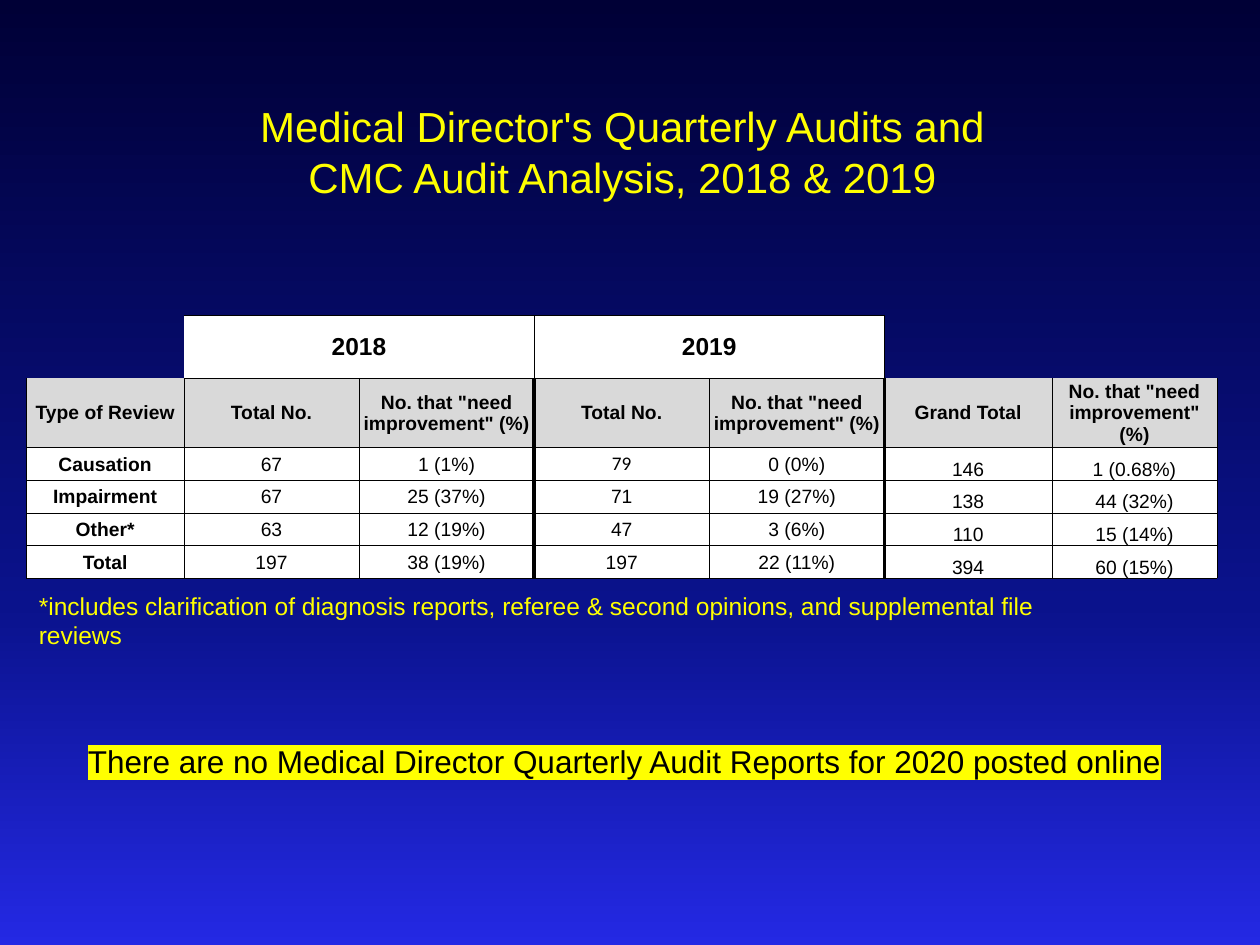
from copy import deepcopy
from dataclasses import dataclass

from lxml import etree
from pptx import Presentation
from pptx.dml.color import RGBColor
from pptx.enum.text import MSO_ANCHOR, MSO_AUTO_SIZE, PP_ALIGN
from pptx.oxml.ns import qn
from pptx.util import Inches, Pt

LEFT, CENTER = PP_ALIGN.LEFT, PP_ALIGN.CENTER
MIDDLE, BOTTOM = MSO_ANCHOR.MIDDLE, MSO_ANCHOR.BOTTOM
GROW = MSO_AUTO_SIZE.SHAPE_TO_FIT_TEXT
PLAIN = "{2D5ABB26-0587-4C30-8999-92F81FD0307C}"
THIN, THICK = 0.25, 2.25

COLORS = {
    "top": "000036", "middle": "0A128C", "bottom": "2429E4",
    "black": "000000", "white": "FFFFFF", "gray": "D9D9D9", "yellow": "FFFF00",
}
STOPS = [("top", 0), ("middle", 0.64), ("bottom", 1)]

WIDTHS = [1.25, 1.39, 1.39, 1.39, 1.39, 1.33, 1.31]
HEIGHTS = [0.5, 0.55] + [0.26] * 4
NEED = 'No. that "need improvement" (%)'
ROWS = [
    ["", "2018", "", "2019", "", "", ""],
    ["Type of Review", "Total No.", NEED, "Total No.", NEED, "Grand Total", NEED],
    ["Causation", "67", "1 (1%)", "79", "0 (0%)", "146", "1 (0.68%)"],
    ["Impairment", "67", "25 (37%)", "71", "19 (27%)", "138", "44 (32%)"],
    ["Other*", "63", "12 (19%)", "47", "3 (6%)", "110", "15 (14%)"],
    ["Total", "197", "38 (19%)", "197", "22 (11%)", "394", "60 (15%)"],
]


@dataclass
class Note:
    text: str
    left: float
    top: float
    width: float
    height: float
    size: int
    color: str = "yellow"
    align: PP_ALIGN = LEFT
    mark: str = ""


NOTES = [
    Note("*includes clarification of diagnosis reports, referee & second opinions, "
         "and supplemental file reviews", 0.21, 4.64, 8.22, 0.34, 14),
    Note("Medical Director's Quarterly Audits and CMC Audit Analysis, 2018 & 2019",
         1.69, 0.75, 6.5, 0.91, 24, align=CENTER),
    Note("There are no Medical Director Quarterly Audit Reports for 2020 posted online",
         0.6, 5.84, 9.06, 0.4, 18, color="black", mark="yellow"),
]


def rgb(name: str) -> RGBColor:
    return RGBColor.from_string(COLORS[name])


def add_fill(node, tag: str, color: str):
    fill = etree.SubElement(node, qn(tag))
    etree.SubElement(fill, qn("a:srgbClr"), val=COLORS[color])


def write(frame, text: str, *, size: int, color: str = "black", bold: bool = False,
          align: PP_ALIGN = CENTER, font: str = "Arial", mark: str = ""):
    para = frame.paragraphs[0]
    para.alignment = align
    run = para.add_run()
    run.text = text
    run.font.size = Pt(size)
    run.font.bold = bold
    run.font.color.rgb = rgb(color)
    if mark:
        add_fill(run.font._element, "a:highlight", mark)
    run.font.name = font


def add_note(slide, note: Note):
    box = slide.shapes.add_textbox(Inches(note.left), Inches(note.top),
                                   Inches(note.width), Inches(note.height))
    frame = box.text_frame
    frame.word_wrap = True
    frame.auto_size = GROW
    write(frame, note.text, size=note.size, color=note.color,
          align=note.align, mark=note.mark)


def edges(row: int, col: int) -> dict[str, float]:
    if row == 0:
        lines = {"T": THIN, "B": THIN}
        lines["R" if col < 3 else "L"] = THIN
        return lines
    lines = {
        "L": THICK if col in (3, 5) else THIN,
        "R": THICK if col in (2, 4) else THIN,
    }
    if row > 1 or 1 <= col <= 4:
        lines["T"] = THIN
    lines["B"] = THIN
    return lines


def add_edges(cell, lines: dict[str, float]):
    props = cell._tc.get_or_add_tcPr()
    for side in "LRTB":
        if side in lines:
            line = etree.SubElement(props, qn(f"a:ln{side}"), w=str(Pt(lines[side])))
            add_fill(line, "a:solidFill", "black")


def fill_cell(cell, row: int, col: int, text: str):
    cell.margin_left = cell.margin_right = cell.margin_top = Inches(0.01)
    cell.margin_bottom = 0
    cell.vertical_anchor = BOTTOM if row > 1 and col > 4 else MIDDLE
    if row == 0 and not 1 <= col <= 4:
        cell.fill.background()
        return
    add_edges(cell, edges(row, col))
    cell.fill.solid()
    cell.fill.fore_color.rgb = rgb("gray" if row == 1 else "white")
    if text:
        write(cell.text_frame, text, size=14 if row == 0 else 11,
              bold=row < 2 or col == 0, font="Calibri" if text == "79" else "Arial")


def add_grid(slide):
    frame = slide.shapes.add_table(len(HEIGHTS), len(WIDTHS), Inches(0.21), Inches(2.5),
                                   Inches(sum(WIDTHS)), Inches(sum(HEIGHTS)))
    table = frame.table
    table.first_row = table.horz_banding = False
    table._tbl.tblPr.find(qn("a:tableStyleId")).text = PLAIN
    for col, width in zip(table.columns, WIDTHS):
        col.width = Inches(width)
    for row, height in zip(table.rows, HEIGHTS):
        row.height = Inches(height)
    for col in (1, 3, 5):
        table.cell(0, col).merge(table.cell(0, col + 1))
    for row, texts in enumerate(ROWS):
        for col, text in enumerate(texts):
            fill_cell(table.cell(row, col), row, col, text)


def paint(slide):
    fill = slide.background.fill
    fill.gradient()
    fill.gradient_angle = 270
    stops = slide._element.find(".//" + qn("a:gsLst"))
    stops.append(deepcopy(stops[0]))
    for stop, (color, place) in zip(fill.gradient_stops, STOPS):
        stop.color.rgb = rgb(color)
        stop.position = place


def main():
    deck = Presentation()
    deck.slide_width, deck.slide_height = Inches(10), Inches(7.5)
    slide = deck.slides.add_slide(deck.slide_layouts[6])
    paint(slide)
    add_grid(slide)
    for note in NOTES:
        add_note(slide, note)
    deck.save("out.pptx")


if __name__ == "__main__":
    main()
